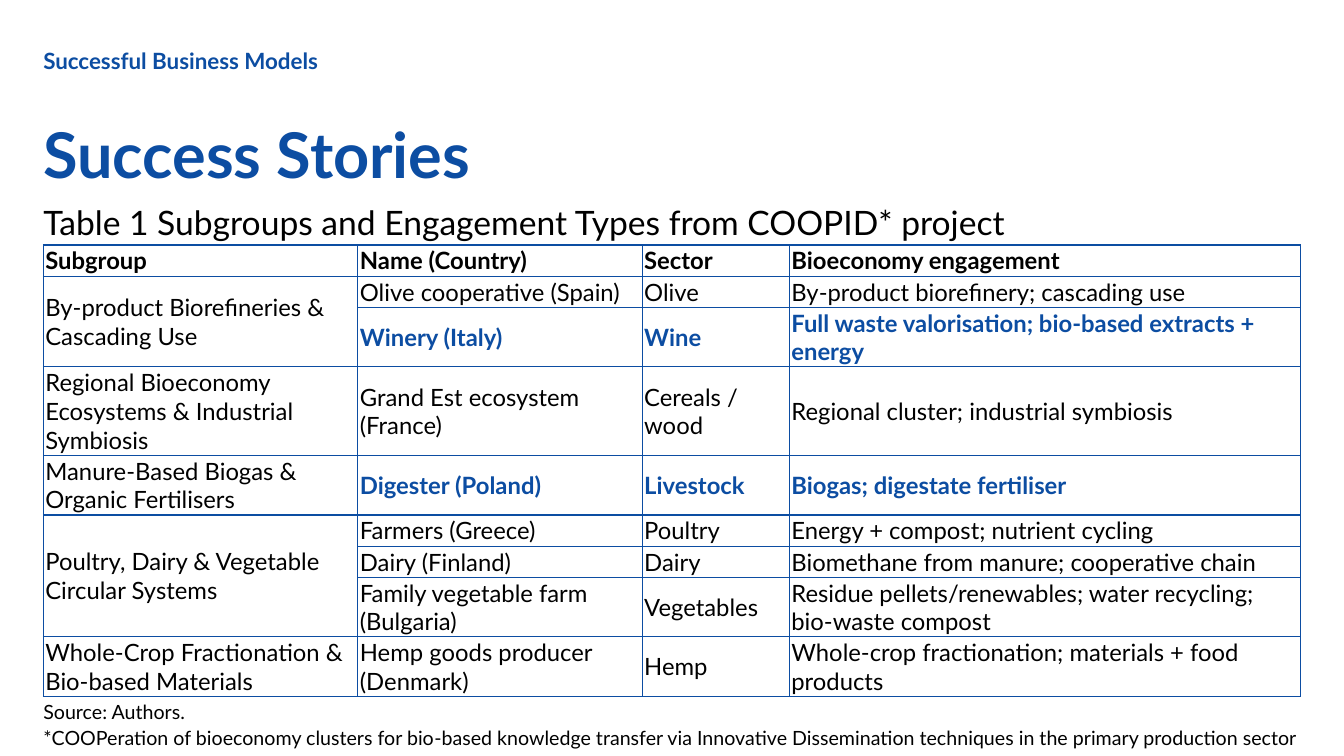
from lxml.etree import SubElement
from pptx import Presentation
from pptx.dml.color import RGBColor
from pptx.enum.shapes import MSO_SHAPE
from pptx.enum.text import MSO_ANCHOR, MSO_AUTO_SIZE, PP_ALIGN
from pptx.oxml.ns import qn
from pptx.util import Inches, Pt

BLUE = RGBColor(0x0C, 0x4D, 0xA2)
BLACK = RGBColor(0, 0, 0)
WHITE = RGBColor(255, 255, 255)
FONT = "Lato"
LEFT = 0.43

HEADINGS = ["Subgroup", "Name (Country)", "Sector", "Bioeconomy engagement"]
SUBGROUPS = [
    ("By‑product Biorefineries & Cascading Use", [
        ("Olive cooperative (Spain)", "Olive", "By‑product biorefinery; cascading use"),
        ("Winery (Italy)", "Wine", "Full waste valorisation; bio‑based extracts + energy"),
    ]),
    ("Regional Bioeconomy Ecosystems & Industrial Symbiosis", [
        ("Grand Est ecosystem (France)", "Cereals / wood", "Regional cluster; industrial symbiosis"),
    ]),
    ("Manure‑Based Biogas & Organic Fertilisers", [
        ("Digester (Poland)", "Livestock", "Biogas; digestate fertiliser"),
    ]),
    ("Poultry, Dairy & Vegetable Circular Systems", [
        ("Farmers (Greece)", "Poultry", "Energy + compost; nutrient cycling"),
        ("Dairy (Finland)", "Dairy", "Biomethane from manure; cooperative chain"),
        ("Family vegetable farm (Bulgaria)", "Vegetables",
         "Residue pellets/renewables; water recycling; bio‑waste compost"),
    ]),
    ("Whole‑Crop Fractionation & Bio‑based Materials", [
        ("Hemp goods producer (Denmark)", "Hemp", "Whole‑crop fractionation; materials + food products"),
    ]),
]
HIGHLIGHTED_SECTORS = {"Wine", "Livestock"}
COLUMN_WIDTHS = [3.12, 2.82, 1.46, 5.07]
ROW_LINES = [1, 1, 2, 3, 2, 1, 1, 2, 2]
LINE_HEIGHTS = {1: 0.31, 2: 0.59, 3: 0.88}


def style_paragraph(paragraph, size, color, bold=False, spacing=None):
    paragraph.alignment = PP_ALIGN.LEFT
    if spacing:
        paragraph.line_spacing = spacing
    for run in paragraph.runs:
        run.font.name = FONT
        run.font.size = Pt(size)
        run.font.bold = bold
        run.font.color.rgb = color


def fill_frame(frame, lines, size, color, bold=False, spacing=1.1):
    frame.text = "\n".join(lines)
    frame.word_wrap = True
    frame.auto_size = MSO_AUTO_SIZE.NONE
    frame.vertical_anchor = MSO_ANCHOR.TOP
    frame.margin_left = frame.margin_right = 0
    frame.margin_top = frame.margin_bottom = 0
    for paragraph in frame.paragraphs:
        style_paragraph(paragraph, size, color, bold, spacing)


def add_line(slide, box, text, size, color, bold=False):
    label = slide.shapes.add_textbox(*map(Inches, box))
    fill_frame(label.text_frame, [text], size, color, bold)


def place_title(slide, box, text):
    title = slide.shapes.title
    title.left, title.top, title.width, title.height = map(Inches, box)
    fill_frame(title.text_frame, [text], 45, BLUE, True, 0.9)


def border_cell(cell):
    properties = cell._tc.get_or_add_tcPr()
    for side in ("a:lnL", "a:lnR", "a:lnT", "a:lnB"):
        border = SubElement(properties, qn(side), w=str(Pt(1)))
        solid = SubElement(border, qn("a:solidFill"))
        SubElement(solid, qn("a:srgbClr"), val=str(BLUE))


def write_cell(cell, text, color=BLACK, bold=False):
    cell.text = text
    cell.vertical_anchor = MSO_ANCHOR.MIDDLE
    cell.margin_left = cell.margin_right = Inches(0.02)
    cell.margin_top = cell.margin_bottom = Inches(0.01)
    style_paragraph(cell.text_frame.paragraphs[0], 17, color, bold)


def add_stories_table(slide, box):
    frame = slide.shapes.add_table(len(ROW_LINES), len(HEADINGS), *map(Inches, box))
    table = frame.table
    table.first_row = table.horz_banding = False
    for column, width in zip(table.columns, COLUMN_WIDTHS):
        column.width = Inches(width)
    for row, lines in zip(table.rows, ROW_LINES):
        row.height = Inches(LINE_HEIGHTS[lines])
    for cell in table.iter_cells():
        border_cell(cell)
        cell.fill.solid()
        cell.fill.fore_color.rgb = WHITE

    for column, heading in enumerate(HEADINGS):
        write_cell(table.cell(0, column), heading, bold=True)
    top = 1
    for subgroup, stories in SUBGROUPS:
        bottom = top + len(stories) - 1
        if bottom > top:
            table.cell(top, 0).merge(table.cell(bottom, 0))
        write_cell(table.cell(top, 0), subgroup)
        for row, story in enumerate(stories, top):
            highlighted = story[1] in HIGHLIGHTED_SECTORS
            for column, text in enumerate(story, 1):
                write_cell(table.cell(row, column), text,
                           BLUE if highlighted else BLACK, highlighted)
        top = bottom + 1


def add_source_note(slide, box):
    note = slide.shapes.add_shape(MSO_SHAPE.RECTANGLE, *map(Inches, box))
    note.shadow.inherit = False
    note.fill.solid()
    note.fill.fore_color.rgb = WHITE
    note.line.fill.background()
    fill_frame(note.text_frame, [
        "Source: Authors.",
        "*COOPeration of bioeconomy clusters for bio-based knowledge transfer via "
        "Innovative Dissemination techniques in the primary production sector",
    ], 14, BLACK)


def main():
    deck = Presentation()
    deck.slide_width, deck.slide_height = Inches(13.33), Inches(7.5)
    slide = deck.slides.add_slide(deck.slide_layouts[5])
    add_line(slide, (LEFT, 0.44, 6.06, 0.4), "Successful Business Models", 16, BLUE, True)
    place_title(slide, (LEFT, 1.23, 12.02, 0.89), "Success Stories")
    add_stories_table(slide, (LEFT, 2.43, sum(COLUMN_WIDTHS), 4.48))
    add_line(slide, (LEFT, 1.96, 11.08, 0.49),
             "Table 1 Subgroups and Engagement Types from COOPID* project", 24, BLACK)
    add_source_note(slide, (LEFT, 6.92, 12.56, 0.51))
    deck.save("out.pptx")


if __name__ == "__main__":
    main()
